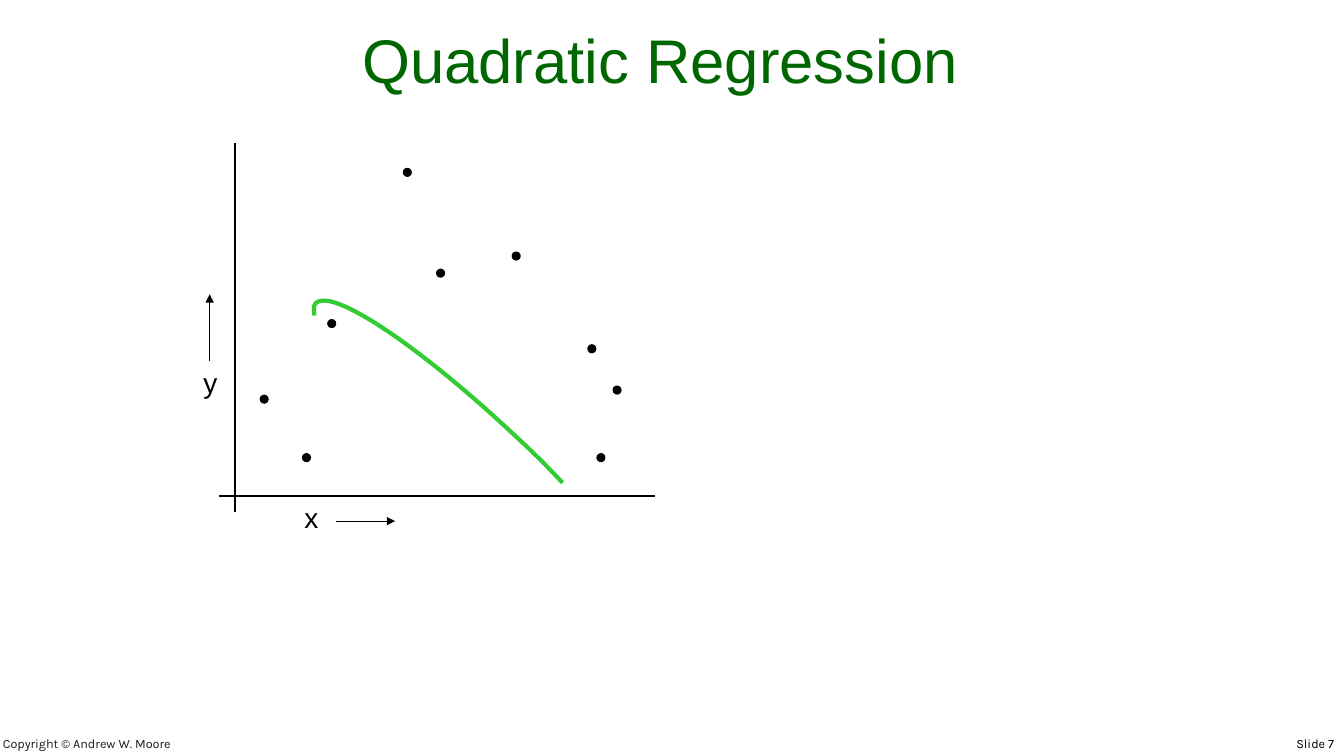
from dataclasses import dataclass
from lxml.etree import SubElement
from pptx import Presentation
from pptx.dml.color import RGBColor
from pptx.enum.shapes import MSO_CONNECTOR, MSO_SHAPE
from pptx.enum.text import MSO_ANCHOR as Anchor, PP_ALIGN as Align
from pptx.oxml.ns import qn
from pptx.util import Inches, Pt


@dataclass(frozen=True)
class Theme:
    title: RGBColor = RGBColor(0x00, 0x66, 0x00)
    ink: RGBColor = RGBColor(0x00, 0x00, 0x00)
    footer: RGBColor = RGBColor(0x1C, 0x1C, 0x1C)
    curve: RGBColor = RGBColor(0x33, 0xCC, 0x33)
    body_font: str = "Arial"
    footer_font: str = "Karla"
    title_size: int = 44
    label_size: int = 20
    footer_size: int = 9


theme = Theme()
presentation = Presentation()
presentation.slide_width, presentation.slide_height = Inches(13.33), Inches(7.5)
slide = presentation.slides.add_slide(presentation.slide_layouts[6])


def add_text(text, *, box, size, font=theme.body_font, color=theme.ink,
             align=Align.LEFT, anchor=Anchor.TOP):
    shape = slide.shapes.add_textbox(*map(Inches, box))
    frame = shape.text_frame
    frame.word_wrap = True
    frame.vertical_anchor = anchor
    paragraph = frame.paragraphs[0]
    paragraph.alignment = align
    run = paragraph.add_run()
    run.text = text
    run.font.size, run.font.name = Pt(size), font
    run.font.color.rgb = color


def add_line(start, end, width, arrow=False):
    line = slide.shapes.add_connector(
        MSO_CONNECTOR.STRAIGHT, *map(Inches, (*start, *end)))
    line.line.color.rgb = theme.ink
    line.line.width = Pt(width)
    if arrow:
        SubElement(line.line._get_or_add_ln(), qn("a:tailEnd"), type="triangle")
    SubElement(line._element.spPr, qn("a:effectLst"))


# Footer and title
add_text("Copyright © Andrew W. Moore", box=(-0.07, 7.22, 7.4, 0.28),
         size=theme.footer_size, font=theme.footer_font, color=theme.footer,
         anchor=Anchor.BOTTOM)
add_text("Slide 7", box=(8.11, 7.25, 5.22, 0.25), size=theme.footer_size,
         font=theme.footer_font, align=Align.RIGHT)
add_text("Quadratic Regression", box=(0.33, 0.17, 12.44, 0.83),
         size=theme.title_size, color=theme.title, align=Align.CENTER,
         anchor=Anchor.BOTTOM)

# Axes
add_line((2.33, 1.42), (2.33, 5.08), 1.5)
add_line((2.17, 4.92), (6.5, 4.92), 1.5)

# Data points, by top left corner
dot_size = 0.08
for left, top in [(2.58, 3.92), (3, 4.5), (3.25, 3.17), (4, 1.67), (4.33, 2.67),
                  (5.08, 2.5), (5.92, 4.5), (6.08, 3.83), (5.83, 3.42)]:
    dot = slide.shapes.add_shape(
        MSO_SHAPE.OVAL, *map(Inches, (left, top, dot_size, dot_size)))
    dot.shadow.inherit = False
    dot.fill.solid()
    dot.fill.fore_color.rgb = theme.ink
    dot.line.color.rgb = theme.ink
    dot.line.width = Pt(0.75)

# Axis labels with arrows
add_text("x", box=(2.92, 4.92, 0.33, 0.43), size=theme.label_size)
add_line((3.33, 5.17), (3.92, 5.17), 0.75, arrow=True)
add_text("y", box=(1.92, 3.58, 0.33, 0.43), size=theme.label_size)
add_line((2.08, 3.58), (2.08, 2.92), 0.75, arrow=True)

# Fitted curve: cubic Bézier segments sampled into short steps
curve_points = [(5.58, 4.79)]
segments = [
    ((5.45, 4.65), (5.31, 4.51), (5.17, 4.38)),
    ((4.2, 3.46), (3.29, 2.84), (3.13, 3.01)),
    ((3.11, 3.03), (3.11, 3.07), (3.12, 3.13)),
]
steps = 24
for control_1, control_2, end in segments:
    start = curve_points[-1]
    for step in range(1, steps + 1):
        t = step / steps
        curve_points.append(tuple(
            (1 - t) ** 3 * a + 3 * (1 - t) ** 2 * t * b
            + 3 * (1 - t) * t ** 2 * c + t ** 3 * d
            for a, b, c, d in zip(start, control_1, control_2, end)))

first, *rest = [(Inches(x), Inches(y)) for x, y in curve_points]
builder = slide.shapes.build_freeform(*first)
builder.add_line_segments(rest, close=False)
curve = builder.convert_to_shape()
curve.shadow.inherit = False
curve.fill.background()
curve.line.color.rgb = theme.curve
curve.line.width = Pt(3)

presentation.save("out.pptx")
